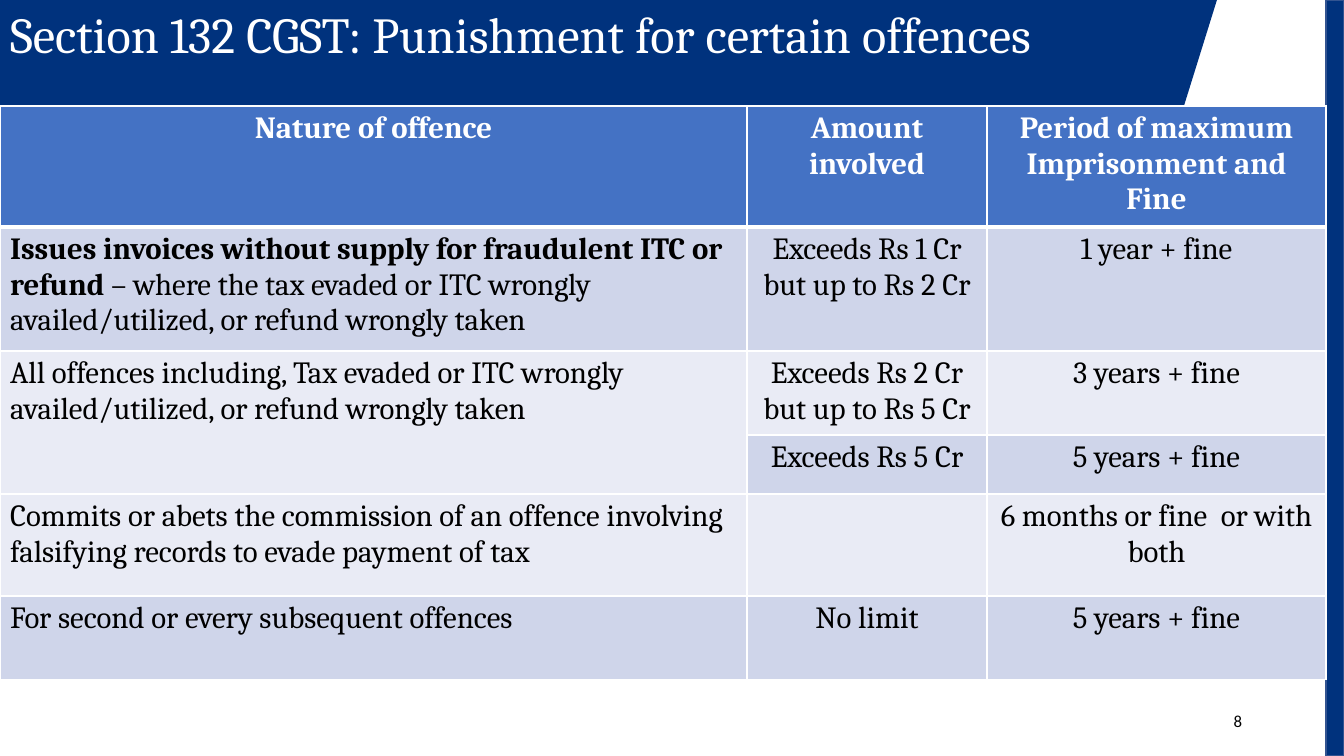
from lxml import etree
from pptx import Presentation
from pptx.dml.color import RGBColor
from pptx.enum.shapes import MSO_SHAPE
from pptx.enum.text import MSO_ANCHOR, MSO_AUTO_SIZE, PP_ALIGN
from pptx.oxml.ns import qn
from pptx.util import Emu, Pt

RECT = MSO_SHAPE.RECTANGLE
TOP, MIDDLE = MSO_ANCHOR.TOP, MSO_ANCHOR.MIDDLE
LEFT, CENTER, RIGHT = PP_ALIGN.LEFT, PP_ALIGN.CENTER, PP_ALIGN.RIGHT
NO_FIT = MSO_AUTO_SIZE.NONE

EMU_PER_PX = 914400 / 100.8
NAVY, EDGE, BLUE = "00327D", "325491", "4472C4"
DARK_BAND, LIGHT_BAND = "CFD5EA", "E9EBF5"
WHITE, BLACK = "FFFFFF", "000000"


def px(n):
    return Emu(round(n * EMU_PER_PX))


def rgb(color):
    return RGBColor.from_string(color)


class Deck:
    """Holds the style and the current slide."""
    font = "Cambria"
    cell_size = 22

    def __init__(self, width, height):
        self.prs = Presentation()
        self.prs.slide_width, self.prs.slide_height = px(width), px(height)
        self.s = self.prs.slides.add_slide(self.prs.slide_layouts[5])

    def paint(self, sp, fill, line=None):
        sp.shadow.inherit = False
        sp.fill.solid()
        sp.fill.fore_color.rgb = rgb(fill)
        if line:
            sp.line.color.rgb = rgb(line)
            sp.line.width = Pt(1)
        else:
            sp.line.fill.background()

    def polygon(self, points, fill):
        builder = self.s.shapes.build_freeform(*points[0], scale=EMU_PER_PX)
        builder.add_line_segments(points[1:], close=True)
        self.paint(builder.convert_to_shape(), fill)

    def rect(self, x, y, w, h, fill, line):
        sp = self.s.shapes.add_shape(RECT, px(x), px(y), px(w), px(h))
        self.paint(sp, fill, line)

    def add_runs(self, tf, runs, size, color, align, font=None):
        """Fill the first paragraph with (text, bold) runs."""
        p = tf.paragraphs[0]
        p.alignment = align
        for text, bold in runs:
            r = p.add_run()
            r.text = text
            r.font.name = font or self.font
            r.font.size = Pt(size)
            r.font.bold = bold
            r.font.color.rgb = rgb(color)
        return p

    def title(self, text, x, y, w, h):
        sp = self.s.shapes.title
        sp.left, sp.top, sp.width, sp.height = px(x), px(y), px(w), px(h)
        self.s.shapes.element.append(sp.element)  # bring in front of the band
        tf = sp.text_frame
        tf.vertical_anchor, tf.auto_size, tf.word_wrap = TOP, NO_FIT, True
        p = self.add_runs(tf, [(text, False)], 36, WHITE, LEFT)
        p.line_spacing, p.space_before = 0.9, Pt(10)

    def text(self, text, x, y, w, h, size, align, font):
        tf = self.s.shapes.add_textbox(px(x), px(y), px(w), px(h)).text_frame
        tf.word_wrap, tf.vertical_anchor = True, MIDDLE
        self.add_runs(tf, [(text, False)], size, BLACK, align, font)

    def border(self, cell, side, width):
        tag = qn("a:ln" + side)
        ln = etree.SubElement(cell._tc.get_or_add_tcPr(), tag, w=str(Pt(width)))
        fill = etree.SubElement(ln, qn("a:solidFill"))
        etree.SubElement(fill, qn("a:srgbClr"), val=WHITE)

    def table(self, x, y, cols, heights, rows, fills, merges):
        tbl = self.s.shapes.add_table(len(rows), len(cols), px(x), px(y),
                                      px(sum(cols)), px(sum(heights))).table
        for col, width in zip(tbl.columns, cols):
            col.width = px(width)
        for i, (row, height) in enumerate(zip(rows, heights)):
            tbl.rows[i].height = px(height)
            for j, runs in enumerate(row):
                cell = tbl.cell(i, j)
                thick = {"B": 3} if i == 0 else {"T": 3} if i == 1 else {}
                for side in "LRTB":
                    self.border(cell, side, thick.get(side, 1))
                cell.fill.solid()
                cell.fill.fore_color.rgb = rgb(fills[i])
                color = BLACK if i else WHITE
                align = LEFT if i and j == 0 else CENTER
                self.add_runs(cell.text_frame, runs, self.cell_size, color, align)
        for first, last in merges:
            tbl.cell(*first).merge(tbl.cell(*last))


def plain(*texts, bold=False):
    return [[(t, bold)] if t else [] for t in texts]


def main():
    deck = Deck(1344, 756)

    # Title band and side bar
    deck.polygon([(0, 0), (0, 106), (1184, 106), (1217, 0)], NAVY)
    deck.rect(1326, 0, 18, 756, NAVY, EDGE)
    deck.title("Section 132 CGST: Punishment for certain offences", 0, 5, 1274, 76)

    # Slide number
    deck.text("8", 950, 701, 302, 40, 12, RIGHT, "Calibri")

    # Table of offences
    invoices = [
        ("Issues invoices without supply for fraudulent ITC or refund", True),
        (" – where the tax evaded or ITC wrongly availed/utilized, "
         "or refund wrongly taken", False)]
    rows = [
        plain("Nature of offence", "Amount involved",
              "Period of maximum Imprisonment and Fine", bold=True),
        [invoices] + plain("Exceeds Rs 1 Cr but up to Rs 2 Cr", "1 year + fine"),
        plain("All offences including, Tax evaded or ITC wrongly "
              "availed/utilized, or refund wrongly taken",
              "Exceeds Rs 2 Cr but up to Rs 5 Cr", "3 years + fine"),
        plain("", "Exceeds Rs 5 Cr", "5 years + fine"),
        plain("Commits or abets the commission of an offence involving "
              "falsifying records to evade payment of tax",
              "", "6 months or fine  or with both"),
        plain("For second or every subsequent offences", "No limit",
              "5 years + fine"),
    ]
    fills = [BLUE] + [DARK_BAND, LIGHT_BAND] * 2 + [DARK_BAND]
    deck.table(0, 106, [747, 240, 339], [84, 124, 84, 59, 102, 84],
               rows, fills, merges=[((2, 0), (3, 0))])

    deck.prs.save("out.pptx")


if __name__ == "__main__":
    main()
